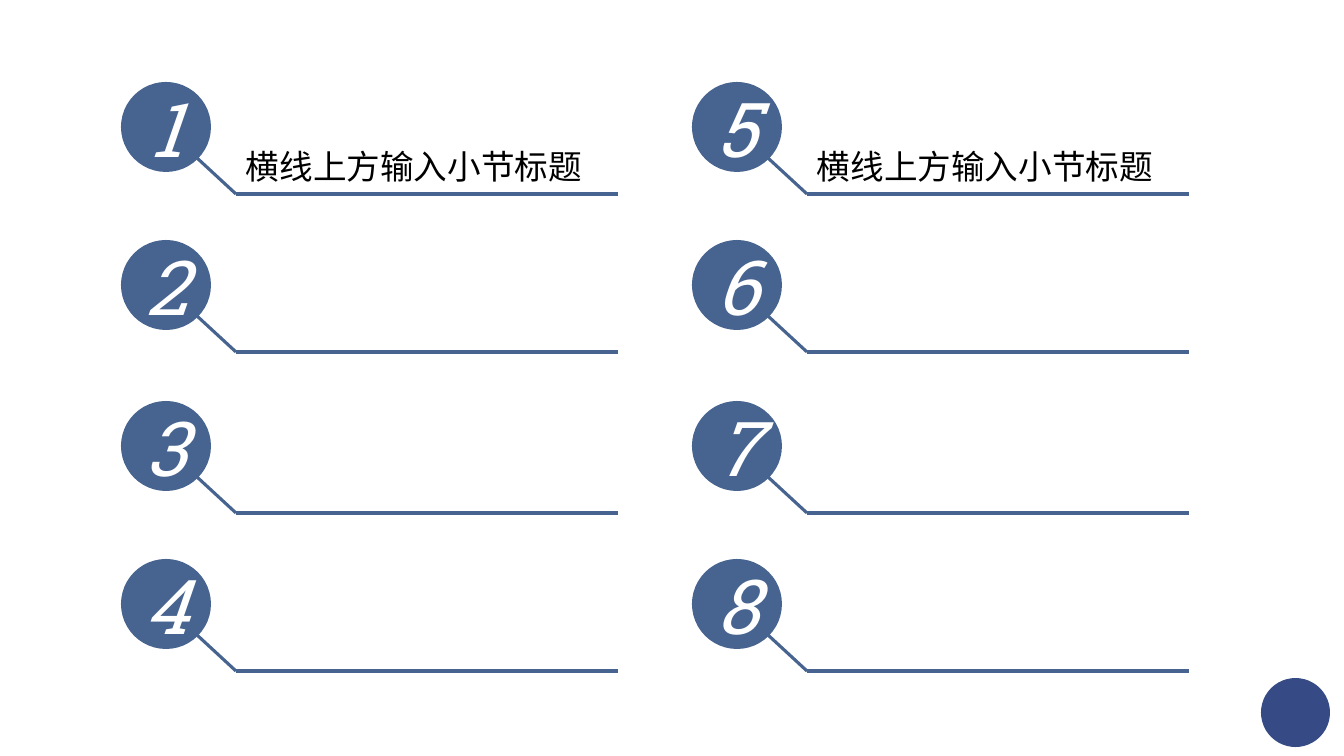
"""Build a contents slide with eight numbered section lines in two columns."""
from lxml import etree
from pptx import Presentation
from pptx import util as u
from pptx.dml.color import RGBColor
from pptx.enum import shapes, text
from pptx.oxml.ns import qn

PX = 914400 / 100.8
BLUE = "476490"
COLUMNS = [121, 692]
ROWS = [82, 240, 401, 559]
LINE_POINTS = [(76, 76), (115, 112), (497, 112)]


def px(*lengths):
    return [u.Emu(round(length * PX)) for length in lengths]


def paint(color_format, color):
    color_format.rgb = RGBColor.from_string(color)


presentation = Presentation()
presentation.slide_width, presentation.slide_height = px(1344, 756)
slide = presentation.slides.add_slide(presentation.slide_layouts[6])

corner = slide.shapes.add_shape(shapes.MSO_SHAPE.OVAL, *px(1261, 678, 69, 69))
corner.shadow.inherit = False
corner.fill.solid()
paint(corner.fill.fore_color, "364A85")
corner.line.fill.background()

for column, left in enumerate(COLUMNS):
    for row, top in enumerate(ROWS):
        circle = slide.shapes.add_shape(shapes.MSO_SHAPE.OVAL, *px(left, top, 90, 90))
        circle.shadow.inherit = False
        circle.fill.solid()
        paint(circle.fill.fore_color, BLUE)
        circle.line.fill.background()
        circle.text_frame.text = str(column * len(ROWS) + row + 1)
        circle.text_frame.vertical_anchor = text.MSO_ANCHOR.MIDDLE
        paragraph = circle.text_frame.paragraphs[0]
        paragraph.alignment = text.PP_ALIGN.CENTER
        font = paragraph.runs[0].font
        font.name, font.size, font.italic = "Roboto Slab", u.Pt(54), True
        paint(font.color, "FFFFFF")

        for start, end in zip(LINE_POINTS, LINE_POINTS[1:]):
            line = slide.shapes.add_connector(
                shapes.MSO_CONNECTOR.STRAIGHT,
                *px(left + start[0], top + start[1], left + end[0], top + end[1]))
            line.line.width = u.Pt(2.25)
            paint(line.line.color, BLUE)
            etree.SubElement(line._element.spPr, qn("a:effectLst"))

    label = slide.shapes.add_textbox(*px(left + 115, 141, 378, 50))
    label.text_frame.word_wrap = True
    label.text_frame.auto_size = text.MSO_AUTO_SIZE.SHAPE_TO_FIT_TEXT
    label.text_frame.text = "横线上方输入小节标题"
    run = label.text_frame.paragraphs[0].runs[0]
    run.font.name, run.font.size = "Noto Sans CJK SC", u.Pt(24)
    paint(run.font.color, "000000")
    etree.SubElement(run.font._element, qn("a:ea"), typeface="Noto Sans CJK SC")

presentation.save("out.pptx")
